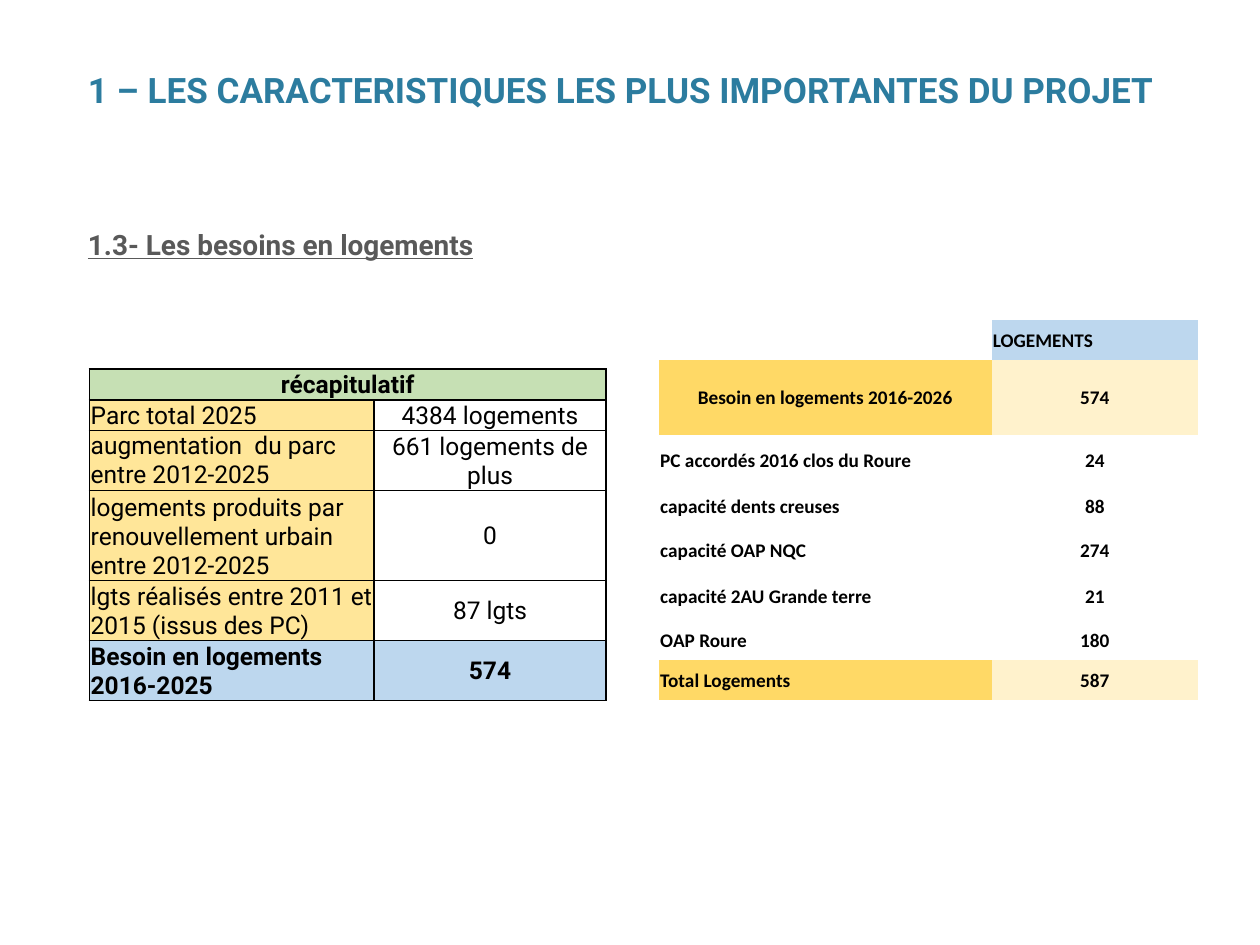
from lxml import etree
from pptx import Presentation
from pptx.dml.color import RGBColor
from pptx.enum.text import MSO_ANCHOR, PP_ALIGN
from pptx.oxml.ns import qn
from pptx.util import Inches, Pt

LEFT, CENTER = PP_ALIGN.LEFT, PP_ALIGN.CENTER
TOP, MIDDLE, BOTTOM = MSO_ANCHOR.TOP, MSO_ANCHOR.MIDDLE, MSO_ANCHOR.BOTTOM

COLORS = {
    "title": "2C7C9F", "heading": "595959", "black": "000000", "white": "FFFFFF",
    "green": "C6E0B4", "blue": "BDD7EE", "sand": "FFE699",
    "gold": "FFD966", "cream": "FFF2CC",
}

# Content: text, left, top, width, height, size, colour, underline
HEADINGS = [
    ("1 – LES CARACTERISTIQUES LES PLUS IMPORTANTES DU PROJET",
     0.6, 0.5, 8.8, 0.42, 20, "title", False),
    ("1.3- Les besoins en logements", 0.6, 1.75, 8.8, 0.38, 16, "heading", True),
]

# Rows: label, value, row height, label fill, value fill, bold, label align, label anchor
SUMMARY = [
    ("récapitulatif", "", 0.24, "green", "green", True, CENTER, MIDDLE),
    ("Parc total 2025", "4384 logements", 0.24, "sand", "white", False, LEFT, BOTTOM),
    ("augmentation  du parc entre 2012-2025", "661 logements de plus",
     0.47, "sand", "white", False, LEFT, TOP),
    ("logements produits par renouvellement urbain entre 2012-2025", "0",
     0.71, "sand", "white", False, LEFT, BOTTOM),
    ("lgts réalisés entre 2011 et 2015 (issus des PC)", "87 lgts",
     0.47, "sand", "white", False, LEFT, BOTTOM),
    ("Besoin en logements 2016-2025", "574", 0.47, "blue", "blue", True, LEFT, BOTTOM),
]
CAPACITY = [
    ("", "LOGEMENTS", 0.32, "white", "blue", True, LEFT, MIDDLE),
    ("Besoin en logements 2016-2026", "574", 0.59, "gold", "cream", True, CENTER, MIDDLE),
    ("PC accordés 2016 clos du Roure", "24", 0.41, "white", "white", True, LEFT, MIDDLE),
    ("capacité dents creuses", "88", 0.32, "white", "white", True, LEFT, MIDDLE),
    ("capacité OAP NQC", "274", 0.37, "white", "white", True, LEFT, MIDDLE),
    ("capacité 2AU Grande terre", "21", 0.37, "white", "white", True, LEFT, MIDDLE),
    ("OAP Roure", "180", 0.32, "white", "white", True, LEFT, MIDDLE),
    ("Total Logements", "587", 0.32, "gold", "cream", True, LEFT, MIDDLE),
]


def rgb(name):
    return RGBColor.from_string(COLORS[name])


def write(p, text, font, size, color, bold, align=LEFT, underline=False):
    p.text = text
    p.alignment = align
    for r in p.runs:
        r.font.name = font
        r.font.size = Pt(size)
        r.font.bold = bold
        r.font.underline = underline
        r.font.color.rgb = rgb(color)


def set_borders(cell, width):
    """Draw all four sides in black, or none when width is 0."""
    tc_pr = cell._tc.get_or_add_tcPr()
    for i, side in enumerate(("a:lnL", "a:lnR", "a:lnT", "a:lnB")):
        ln = etree.Element(qn(side), w=str(Pt(width)))
        if width:
            fill = etree.SubElement(ln, qn("a:solidFill"))
            etree.SubElement(fill, qn("a:srgbClr"), val=COLORS["black"])
        else:
            etree.SubElement(ln, qn("a:noFill"))
        tc_pr.insert(i, ln)


def fill_cell(cell, text, fill, font, size, bold, align, anchor, border):
    cell.margin_left = cell.margin_right = cell.margin_top = Inches(0.01)
    cell.margin_bottom = 0
    cell.vertical_anchor = anchor
    cell.fill.solid()
    cell.fill.fore_color.rgb = rgb(fill)
    write(cell.text_frame.paragraphs[0], text, font, size, "black", bold, align)
    set_borders(cell, border)


def add_data_table(slide, rows, left, top, widths, font, size, border):
    height = sum(row[2] for row in rows)
    table = slide.shapes.add_table(len(rows), len(widths), Inches(left), Inches(top),
                                   Inches(sum(widths)), Inches(height)).table
    table.first_row = table.horz_banding = False
    for col, width in zip(table.columns, widths):
        col.width = Inches(width)
    for i, (label, value, row_h, label_fill, value_fill, bold, align, anchor) in enumerate(rows):
        table.rows[i].height = Inches(row_h)
        value_align = CENTER if label else LEFT
        fill_cell(table.cell(i, 0), label, label_fill, font, size, bold, align, anchor, border)
        fill_cell(table.cell(i, 1), value, value_fill, font, size, bold,
                  value_align, MIDDLE, border)
    return table


prs = Presentation()
prs.slide_width, prs.slide_height = Inches(10), Inches(7.5)
slide = prs.slides.add_slide(prs.slide_layouts[6])

# Title and section heading
for text, left, top, width, height, size, color, underline in HEADINGS:
    tf = slide.shapes.add_textbox(Inches(left), Inches(top),
                                  Inches(width), Inches(height)).text_frame
    tf.word_wrap = True
    tf.vertical_anchor = MIDDLE
    write(tf.paragraphs[0], text, "Roboto", size, color, True, underline=underline)

# Summary table, with its header across both columns
summary = add_data_table(slide, SUMMARY, 0.71, 2.93, (2.26, 1.84), "Roboto", 14, 1)
summary.cell(0, 0).merge(summary.cell(0, 1))

# Capacity table
add_data_table(slide, CAPACITY, 5.23, 2.54, (2.64, 1.64), "Calibri", 11, 0)

prs.save("out.pptx")
